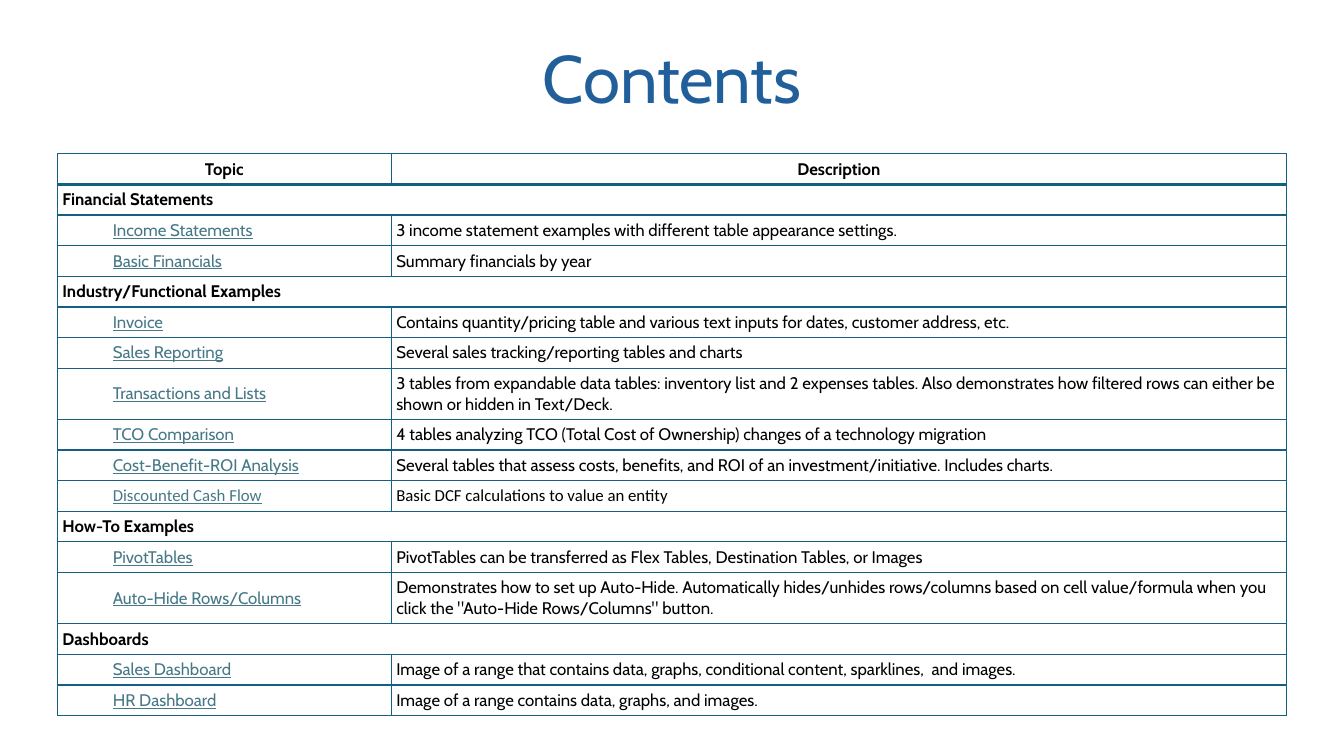
from lxml.etree import SubElement
from pptx import Presentation
from pptx.dml.color import RGBColor
from pptx.enum.text import MSO_ANCHOR, PP_ALIGN
from pptx.oxml.ns import qn
from pptx.util import Pt

INK = {"title": "215F9A", "line": "156082", "link": "467886", "text": "000000"}

ROWS = [
    ("Topic", "Description"),
    ("Financial Statements", ""),
    ("Income Statements", "3 income statement examples with different table appearance settings."),
    ("Basic Financials", "Summary financials by year"),
    ("Industry/Functional Examples", ""),
    ("Invoice", "Contains quantity/pricing table and various text inputs for dates, customer address, etc."),
    ("Sales Reporting", "Several sales tracking/reporting tables and charts"),
    ("Transactions and Lists", "3 tables from expandable data tables: inventory list and 2 expenses tables. "
     "Also demonstrates how filtered rows can either be shown or hidden in Text/Deck."),
    ("TCO Comparison", "4 tables analyzing TCO (Total Cost of Ownership) changes of a technology migration"),
    ("Cost-Benefit-ROI Analysis", "Several tables that assess costs, benefits, and ROI of an "
     "investment/initiative. Includes charts."),
    ("Discounted Cash Flow", "Basic DCF calculations to value an entity"),
    ("How-To Examples", ""),
    ("PivotTables", "PivotTables can be transferred as Flex Tables, Destination Tables, or Images"),
    ("Auto-Hide Rows/Columns", "Demonstrates how to set up Auto-Hide. Automatically hides/unhides "
     "rows/columns based on cell value/formula when you click the \"Auto-Hide Rows/Columns\" button."),
    ("Dashboards", ""),
    ("Sales Dashboard", "Image of a range that contains data, graphs, conditional content, sparklines,  and images."),
    ("HR Dashboard", "Image of a range contains data, graphs, and images."),
]
TALL = ("Transactions and Lists", "Auto-Hide Rows/Columns")


def style(para, size, color, face="Cabin"):
    para.font.size = Pt(size)
    para.font.name = face
    para.font.color.rgb = RGBColor.from_string(INK[color])


def border(cell, row):
    props = cell._tc.get_or_add_tcPr()
    for side in "LRTB":
        thick = (side, row) in (("B", 0), ("T", 1))
        line = SubElement(props, qn("a:ln" + side), w=str(Pt(2 if thick else 1)))
        fill = SubElement(line, qn("a:solidFill"))
        SubElement(fill, qn("a:srgbClr"), val=INK["line"])


deck = Presentation()
deck.slide_width, deck.slide_height = Pt(960), Pt(540)
slide = deck.slides.add_slide(deck.slide_layouts[5])

title = slide.shapes.title
title.left, title.top, title.width, title.height = Pt(66), Pt(22), Pt(828), Pt(72.5)
title.text_frame.vertical_anchor = MSO_ANCHOR.MIDDLE
head = title.text_frame.paragraphs[0]
head.text = "Contents"
head.alignment = PP_ALIGN.CENTER
head.line_spacing = 0.9
style(head, 48, "title")

frame = slide.shapes.add_table(len(ROWS), 2, Pt(41), Pt(109.8), Pt(878), Pt(401.5))
table = frame.table
table.horz_banding = False
table.columns[0].width, table.columns[1].width = Pt(238.5), Pt(639.5)

for row, texts in enumerate(ROWS):
    table.rows[row].height = Pt(36.5 if texts[0] in TALL else 21.9)
    group = not texts[1]
    face = "Calibri" if texts[0] == "Discounted Cash Flow" else "Cabin"
    if group:
        table.cell(row, 0).merge(table.cell(row, 1))
    for col, text in enumerate(texts):
        cell = table.cell(row, col)
        border(cell, row)
        cell.fill.background()
        cell.margin_left = cell.margin_right = Pt(3.6)
        cell.margin_top = cell.margin_bottom = Pt(3.6)
        cell.vertical_anchor = MSO_ANCHOR.MIDDLE
        para = cell.text_frame.paragraphs[0]
        para.text = text
        link = col == 0 and row > 0 and not group
        style(para, 12, "link" if link else "text", face)
        para.font.bold = row == 0 or group
        if row == 0:
            cell.vertical_anchor = MSO_ANCHOR.BOTTOM
            para.alignment = PP_ALIGN.CENTER
        elif group:
            cell.vertical_anchor = MSO_ANCHOR.TOP
        elif link:
            para.font.underline = True
            para.level = 1
            indent = para._p.get_or_add_pPr()
            indent.set("marL", str(Pt(36)))
            indent.set("indent", "0")

deck.save("out.pptx")
